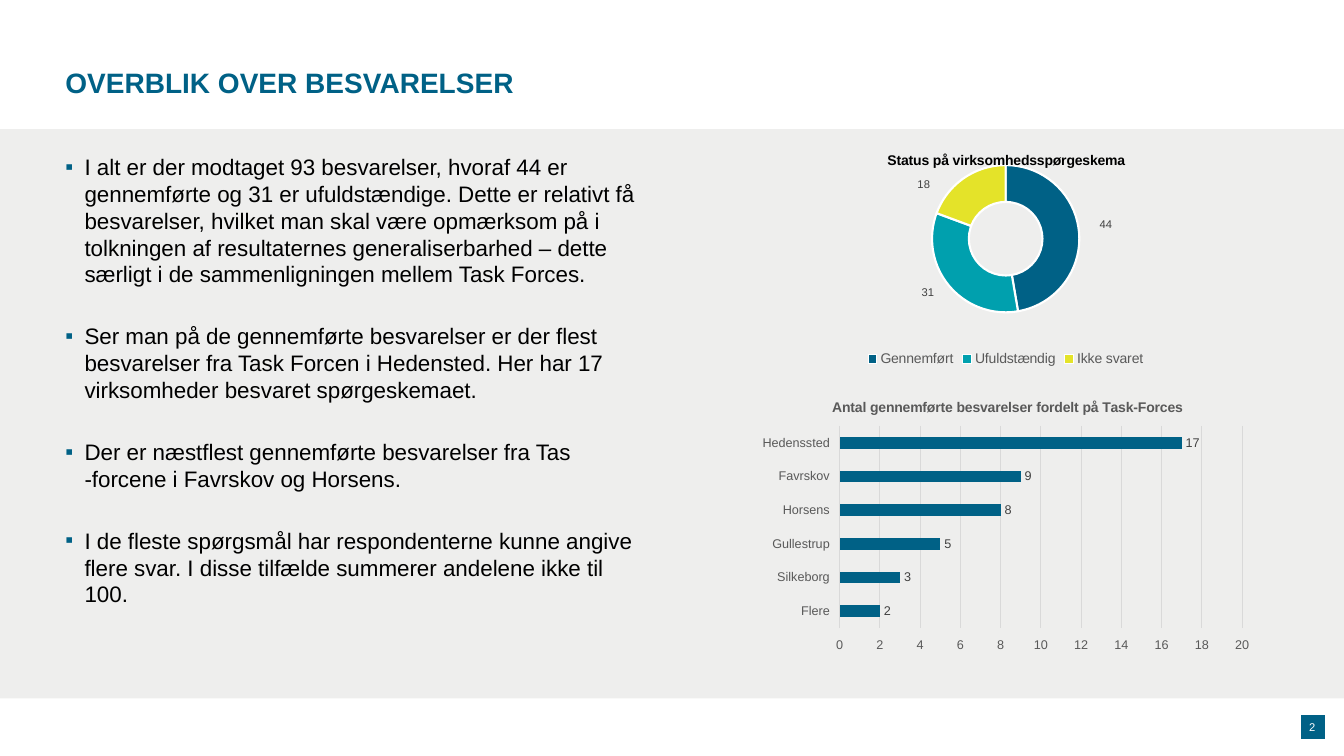
from lxml import etree
from pptx import Presentation
from pptx.chart.data import CategoryChartData
from pptx.dml.color import RGBColor
from pptx.enum.chart import (XL_CHART_TYPE as ChartType, XL_LABEL_POSITION as LabelPos,
                             XL_LEGEND_POSITION as LegendPos, XL_TICK_MARK as Tick,
                             XL_TICK_LABEL_POSITION as TickLabels)
from pptx.enum.shapes import MSO_SHAPE as Shape
from pptx.enum.text import MSO_ANCHOR as Anchor, PP_ALIGN as Align
from pptx.oxml.ns import qn
from pptx.util import Inches, Pt

FONT = "Arial"
BLUE, TEAL, YELLOW = "006186", "00A0AE", "E4E329"
BLACK, WHITE, BAND = "000000", "FFFFFF", "EEEEED"
GREY, LABEL_GREY, GRID = "595959", "404040", "D9D9D9"

POINTS = [
    "I alt er der modtaget 93 besvarelser, hvoraf 44 er gennemførte og 31 er "
    "ufuldstændige. Dette er relativt få besvarelser, hvilket man skal være opmærksom "
    "på i tolkningen af resultaternes generaliserbarhed – dette særligt i de "
    "sammenligningen mellem Task Forces.",
    "Ser man på de gennemførte besvarelser er der flest besvarelser fra Task Forcen i "
    "Hedensted. Her har 17 virksomheder besvaret spørgeskemaet.",
    "Der er næstflest gennemførte besvarelser fra Tas\v-forcene i Favrskov og Horsens.",
    "I de fleste spørgsmål har respondenterne kunne angive flere svar. I disse tilfælde "
    "summerer andelene ikke til 100.",
]
TASK_FORCES = {"Hedenssted": 17, "Favrskov": 9, "Horsens": 8,
               "Gullestrup": 5, "Silkeborg": 3, "Flere": 2}
STATUS = {"Gennemført": 44, "Ufuldstændig": 31, "Ikke svaret": 18}
STATUS_COLORS = [BLUE, TEAL, YELLOW]
STATUS_LABEL_OFFSETS = [(0.09, -0.04), (-0.07, 0.08), (-0.1, -0.04)]


def rgb(color):
    return RGBColor.from_string(color)


def set_layout(element, index, **values):
    """Give a chart element a manual layout, placed at the given child index."""
    for old in element.findall(qn("c:layout")):
        element.remove(old)
    layout = etree.Element(qn("c:layout"))
    manual = etree.SubElement(layout, qn("c:manualLayout"))
    for name, value in values.items():
        etree.SubElement(manual, qn("c:" + name)).set("val", str(value))
    element.insert(index, layout)


def hide_leader_lines(chart):
    for labels in chart._chartSpace.xpath("//c:dLbls"):
        for old in labels.findall(qn("c:showLeaderLines")):
            labels.remove(old)
        etree.SubElement(labels, qn("c:showLeaderLines")).set("val", "0")


class SlideBuilder:
    def __init__(self, slide):
        self.shapes = slide.shapes

    def style(self, font, size, color, bold=False):
        font.name, font.size, font.bold = FONT, Pt(size), bold
        font.color.rgb = rgb(color)

    def block(self, kind, box, color):
        sp = self.shapes.add_shape(kind, *map(Inches, box))
        sp.shadow.inherit = False
        sp.fill.solid()
        sp.fill.fore_color.rgb = rgb(color)
        sp.line.fill.background()

    def text(self, box, paragraphs, size, color, bold=False):
        tf = self.shapes.add_textbox(*map(Inches, box)).text_frame
        tf.word_wrap = True
        for i, content in enumerate(paragraphs):
            p = tf.paragraphs[0] if i == 0 else tf.add_paragraph()
            p.text = content
            for r in p.runs:
                self.style(r.font, size, color, bold)
        return tf

    def bullets(self, box, paragraphs, size, gap):
        tf = self.text(box, paragraphs, size, BLACK)
        for i, p in enumerate(tf.paragraphs):
            if i:
                p.space_before = Pt(gap)
            pPr = p._p.get_or_add_pPr()
            pPr.set("marL", str(Inches(0.19)))
            pPr.set("indent", str(-Inches(0.19)))
            color = etree.SubElement(pPr, qn("a:buClr"))
            etree.SubElement(color, qn("a:srgbClr")).set("val", BLUE)
            etree.SubElement(pPr, qn("a:buFont")).set("typeface", FONT)
            etree.SubElement(pPr, qn("a:buChar")).set("char", "▪")

    def chart(self, kind, box, values, title, title_color, title_at, plot_box):
        data = CategoryChartData()
        data.categories = list(values)
        data.add_series("Besvarelser", list(values.values()))
        chart = self.shapes.add_chart(kind, *map(Inches, box), data).chart
        self.style(chart.font, 10, BLACK)
        chart.has_legend = False
        chart.has_title = True
        tf = chart.chart_title.text_frame
        tf.text = title
        self.style(tf.paragraphs[0].runs[0].font, 10, title_color, bold=True)
        x, y = title_at
        set_layout(chart._chartSpace.xpath("c:chart/c:title")[0], 1,
                   xMode="edge", yMode="edge", x=x, y=y)
        x, y, w, h = plot_box
        set_layout(chart._chartSpace.xpath("c:chart/c:plotArea")[0], 0,
                   layoutTarget="inner", xMode="edge", yMode="edge", x=x, y=y, w=w, h=h)
        return chart

    def bar_chart(self, box, values, title):
        chart = self.chart(ChartType.BAR_CLUSTERED, box, values, title, GREY,
                           (0.15, 0.04), (0.17, 0.15, 0.8, 0.74))
        plot = chart.plots[0]
        plot.gap_width, plot.vary_by_categories = 182, False
        series = plot.series[0]
        series.format.fill.solid()
        series.format.fill.fore_color.rgb = rgb(BLUE)
        labels = series.data_labels
        labels.show_value, labels.position = True, LabelPos.OUTSIDE_END
        self.style(labels.font, 9, LABEL_GREY)

        names, counts = chart.category_axis, chart.value_axis
        for axis in (names, counts):
            axis.major_tick_mark = axis.minor_tick_mark = Tick.NONE
            self.style(axis.tick_labels.font, 9, GREY)
        names.reverse_order = True
        names.tick_label_position = TickLabels.LOW
        counts.tick_label_position = TickLabels.HIGH
        counts.minimum_scale, counts.maximum_scale, counts.major_unit = 0, 20, 2
        counts.format.line.fill.background()
        counts.has_major_gridlines = True
        for line in (names.format.line, counts.major_gridlines.format.line):
            line.color.rgb, line.width = rgb(GRID), Pt(0.75)

    def doughnut_chart(self, box, values, title, colors, label_offsets):
        chart = self.chart(ChartType.DOUGHNUT, box, values, title, BLACK,
                           (0.26, 0.05), (0.34, 0.12, 0.32, 0.63))
        chart.has_legend = True
        chart.legend.position = LegendPos.BOTTOM
        chart.legend.include_in_layout = False
        self.style(chart.legend.font, 10, GREY)
        series = chart.plots[0].series[0]
        series.data_labels.show_value = True
        self.style(series.data_labels.font, 8, LABEL_GREY)
        for i, color in enumerate(colors):
            point = series.points[i]
            point.format.fill.solid()
            point.format.fill.fore_color.rgb = rgb(color)
            point.format.line.color.rgb = rgb(WHITE)
            point.format.line.width = Pt(1.5)
            self.style(point.data_label.font, 8, LABEL_GREY)
        for label, (x, y) in zip(chart._chartSpace.xpath("//c:dLbl"), label_offsets):
            set_layout(label, 1, x=x, y=y)
        hide_leader_lines(chart)


def main():
    prs = Presentation()
    prs.slide_width, prs.slide_height = Inches(13.33), Inches(7.5)
    s = SlideBuilder(prs.slides.add_slide(prs.slide_layouts[6]))

    s.block(Shape.FLOWCHART_PROCESS, (12.9, 7.09, 0.24, 0.24), BLUE)
    s.block(Shape.RECTANGLE, (0, 1.28, 13.33, 5.65), BAND)
    number = s.text((12.87, 7.06, 0.29, 0.31), ["2"], 8, WHITE)
    number.margin_left = number.margin_right = 0
    number.margin_top = number.margin_bottom = 0
    number.vertical_anchor = Anchor.MIDDLE
    number.paragraphs[0].alignment = Align.CENTER

    s.text((0.55, 0.6, 12.23, 0.62), ["OVERBLIK OVER BESVARELSER"], 20, BLUE, bold=True)
    s.bullets((0.55, 1.47, 5.94, 5.25), POINTS, 16, gap=25)
    s.bar_chart((7.48, 3.82, 4.99, 2.71), TASK_FORCES,
                "Antal gennemførte besvarelser fordelt på Task-Forces")
    s.doughnut_chart((7.48, 1.36, 4.99, 2.32), STATUS,
                     "Status på virksomhedsspørgeskema", STATUS_COLORS,
                     STATUS_LABEL_OFFSETS)
    prs.save("out.pptx")


if __name__ == "__main__":
    main()
